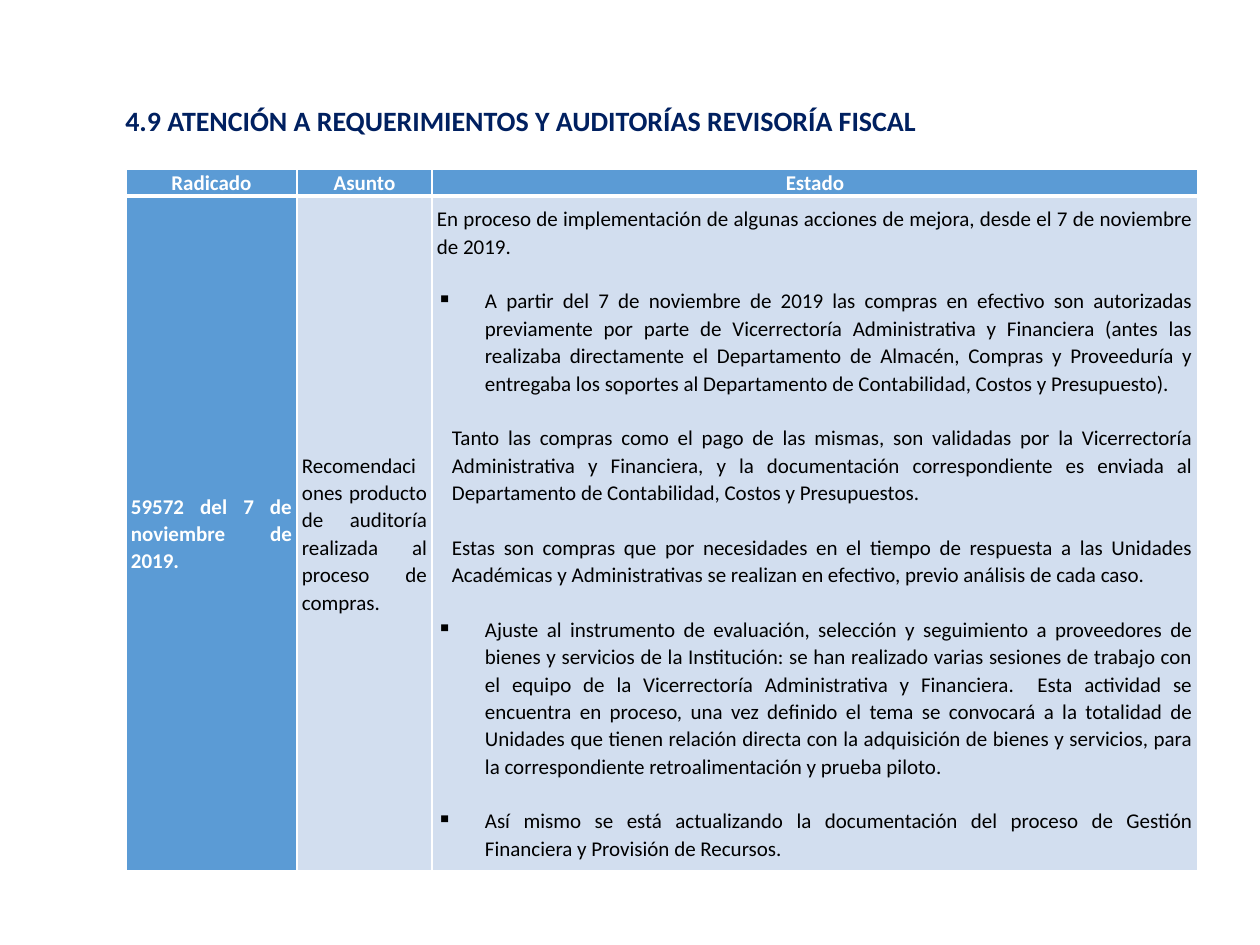
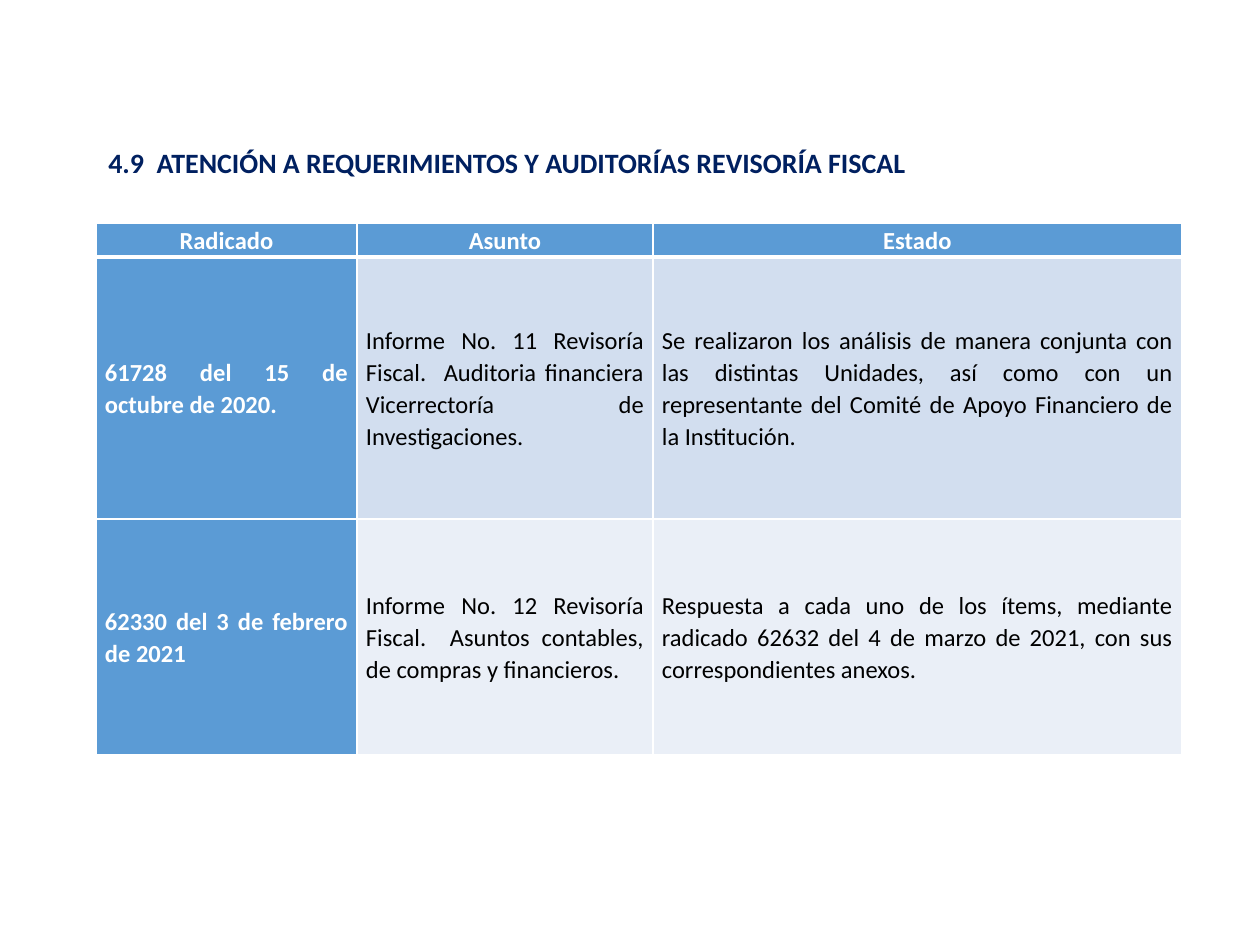
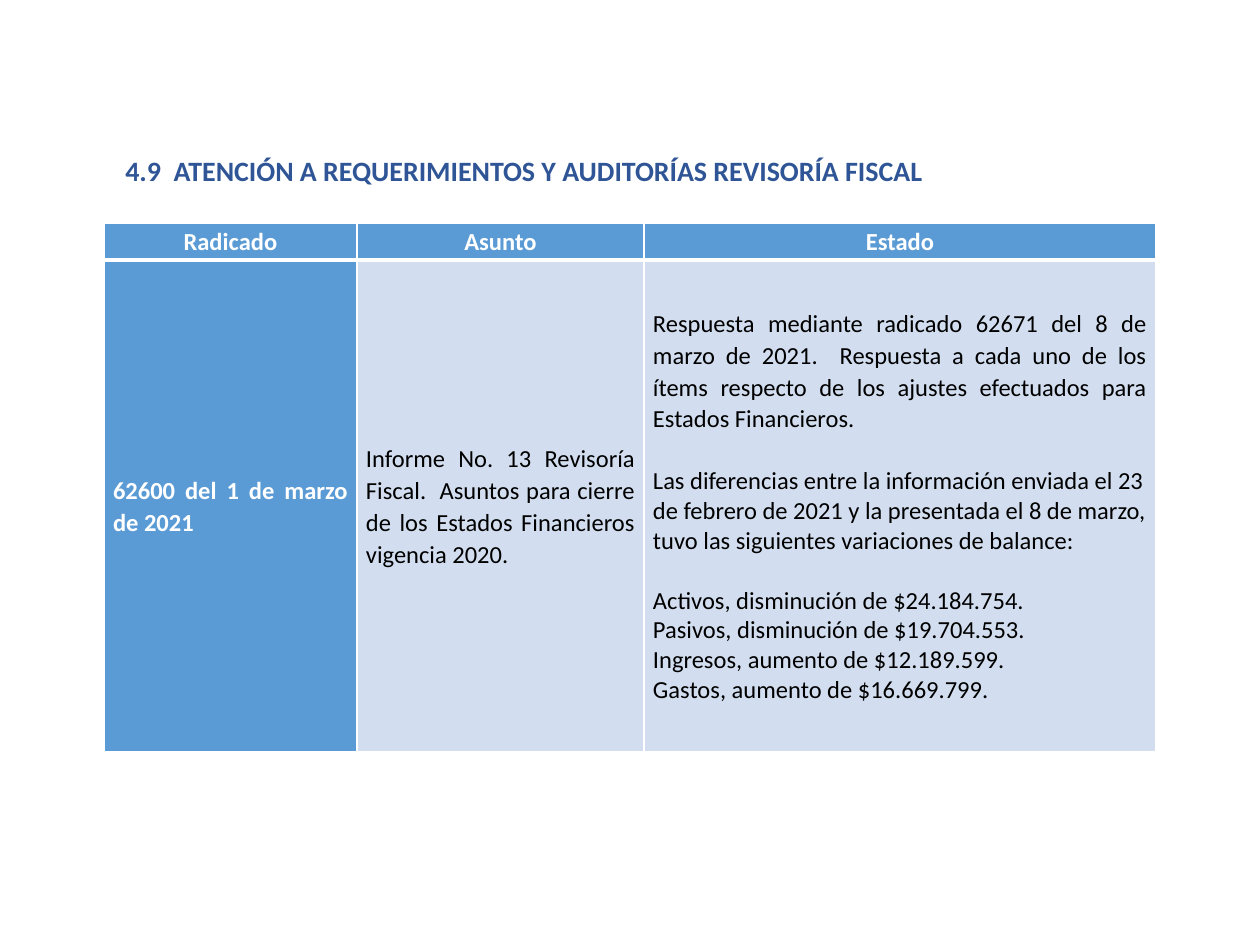
from lxml import etree
from pptx import Presentation
from pptx.dml.color import RGBColor
from pptx.enum.text import MSO_ANCHOR, PP_ALIGN
from pptx.oxml.ns import qn
from pptx.util import Emu, Pt

MIDDLE, BOTTOM = MSO_ANCHOR.MIDDLE, MSO_ANCHOR.BOTTOM
LEFT, CENTER, JUSTIFY = PP_ALIGN.LEFT, PP_ALIGN.CENTER, PP_ALIGN.JUSTIFY

NAVY = RGBColor(0x00, 0x20, 0x60)
ROYAL = RGBColor(0x2F, 0x55, 0x97)
BLUE = RGBColor(0x5B, 0x9B, 0xD5)
BAND_COLORS = [RGBColor(0xD2, 0xDE, 0xEF), RGBColor(0xEA, 0xEF, 0xF7)]
WHITE = RGBColor(0xFF, 0xFF, 0xFF)
BLACK = RGBColor(0x00, 0x00, 0x00)

FONT = "Calibri"
PX_PER_INCH = 126
LINE_SPACING = 1.07
THIN, THICK = 1, 3

# Paragraph kinds: alignment, line spacing, left margin px, bullet
KINDS = {
    "body": (JUSTIFY, LINE_SPACING, 0, None),
    "indented": (JUSTIFY, LINE_SPACING, 15, None),
    "bullet": (JUSTIFY, LINE_SPACING, 48, "▪"),
    "plain": (LEFT, 1.0, 0, None),
    "header": (CENTER, LINE_SPACING, 0, None),
}

HEADERS = ["Radicado", "Asunto", "Estado"]

# Each cell is a text or a list of (kind, points before, text)
PURCHASE_STATUS = [
    ("body", 0, "En proceso de implementación de algunas acciones de mejora, desde el 7 de noviembre de 2019."),
    ("bullet", 15.6, "A partir del 7 de noviembre de 2019 las compras en efectivo son autorizadas previamente por parte de Vicerrectoría Administrativa y Financiera (antes las realizaba directamente el Departamento de Almacén, Compras y Proveeduría y entregaba los soportes al Departamento de Contabilidad, Costos y Presupuesto)."),
    ("indented", 15.6, "Tanto las compras como el pago de las mismas, son validadas por la Vicerrectoría Administrativa y Financiera, y la documentación correspondiente es enviada al Departamento de Contabilidad, Costos y Presupuestos."),
    ("indented", 15.6, "Estas son compras que por necesidades en el tiempo de respuesta a las Unidades Académicas y Administrativas se realizan en efectivo, previo análisis de cada caso."),
    ("bullet", 15.6, "Ajuste al instrumento de evaluación, selección y seguimiento a proveedores de bienes y servicios de la Institución: se han realizado varias sesiones de trabajo con el equipo de la Vicerrectoría Administrativa y Financiera.  Esta actividad se encuentra en proceso, una vez definido el tema se convocará a la totalidad de Unidades que tienen relación directa con la adquisición de bienes y servicios, para la correspondiente retroalimentación y prueba piloto."),
    ("bullet", 15.6, "Así mismo se está actualizando la documentación del proceso de Gestión Financiera y Provisión de Recursos."),
]
BALANCE_STATUS = [
    ("body", 0, "Respuesta mediante radicado 62671 del 8 de marzo de 2021.  Respuesta a cada uno de los ítems respecto de los ajustes efectuados para Estados Financieros."),
    ("plain", 18.3, "Las diferencias entre la información enviada el 23 de febrero de 2021 y la presentada el 8 de marzo, tuvo las siguientes variaciones de balance:"),
    ("plain", 17.1, "Activos, disminución de $24.184.754."),
    ("plain", 0, "Pasivos, disminución de $19.704.553."),
    ("plain", 0, "Ingresos, aumento de $12.189.599."),
    ("plain", 0, "Gastos, aumento de $16.669.799."),
]

SLIDES = [
    {
        "title": "4.9 ATENCIÓN A REQUERIMIENTOS Y AUDITORÍAS REVISORÍA FISCAL",
        "title_at": (113, 71, 1147), "title_color": NAVY,
        "table_at": (126, 169), "columns": [171, 135, 766], "heights": [26, 675],
        "size": 12, "inset": 5,
        "rows": [
            ["59572 del 7 de noviembre de 2019.",
             "Recomendaciones producto de auditoría realizada al proceso de compras.",
             PURCHASE_STATUS],
        ],
    },
    {
        "title": "4.9  ATENCIÓN A REQUERIMIENTOS Y AUDITORÍAS REVISORÍA FISCAL",
        "title_at": (96, 113, 1147), "title_color": NAVY,
        "table_at": (96, 223), "columns": [261, 296, 529], "heights": [34, 262, 236],
        "size": 14, "inset": 9,
        "rows": [
            ["61728 del 15 de octubre de 2020.",
             "Informe No. 11 Revisoría Fiscal.  Auditoria financiera Vicerrectoría de Investigaciones.",
             "Se realizaron los análisis de manera conjunta con las distintas Unidades, así como con un representante del Comité de Apoyo Financiero de la Institución."],
            ["62330 del 3 de febrero de 2021",
             "Informe No. 12 Revisoría Fiscal.  Asuntos contables, de compras y financieros.",
             "Respuesta a cada uno de los ítems, mediante radicado 62632 del 4 de marzo de 2021, con sus correspondientes anexos."],
        ],
    },
    {
        "title": "4.9  ATENCIÓN A REQUERIMIENTOS Y AUDITORÍAS REVISORÍA FISCAL",
        "title_at": (113, 121, 1033), "title_color": ROYAL,
        "table_at": (104, 223), "columns": [253, 287, 512], "heights": [37, 492],
        "size": 14, "inset": 9,
        "rows": [
            ["62600 del 1 de marzo de 2021",
             "Informe No. 13 Revisoría Fiscal.  Asuntos para cierre de los Estados Financieros vigencia 2020.",
             BALANCE_STATUS],
        ],
    },
]


def px(length):
    return Emu(round(length * 914400 / PX_PER_INCH))


def add_span(para, text, size, color, bold):
    span = para.add_run()
    span.text = text
    span.font.name = FONT
    span.font.size = Pt(size)
    span.font.bold = bold
    span.font.color.rgb = color


def format_para(para, kind, before):
    alignment, spacing, margin, bullet = KINDS[kind]
    properties = para._p.get_or_add_pPr()
    properties.set("marL", str(px(margin)))
    properties.set("indent", str(px(-margin) if bullet else 0))
    if bullet:
        etree.SubElement(properties, qn("a:buChar"), char=bullet)
    else:
        etree.SubElement(properties, qn("a:buNone"))
    para.alignment = alignment
    para.line_spacing = spacing
    if before:
        para.space_before = Pt(before)


def add_border(cell, side, width):
    line = etree.SubElement(cell._tc.get_or_add_tcPr(), qn("a:ln" + side), w=str(Pt(width)))
    fill = etree.SubElement(line, qn("a:solidFill"))
    etree.SubElement(fill, qn("a:srgbClr"), val=str(WHITE))


def fill_cell(cell, content, row, column, size, inset):
    # Heavy rule between the header and the first body row
    widths = {"L": THIN, "R": THIN,
              "T": THICK if row == 1 else THIN,
              "B": THICK if row == 0 else THIN}
    for side, width in widths.items():
        add_border(cell, side, width)

    strong = row == 0 or column == 0
    cell.fill.solid()
    cell.fill.fore_color.rgb = BLUE if strong else BAND_COLORS[(row - 1) % 2]
    cell.vertical_anchor = MIDDLE
    cell.margin_left = cell.margin_right = px(inset)
    cell.margin_top = cell.margin_bottom = 0

    if isinstance(content, str):
        content = [("header" if row == 0 else "body", 0, content)]
    frame = cell.text_frame
    for index, (kind, before, text) in enumerate(content):
        para = frame.add_paragraph() if index else frame.paragraphs[0]
        format_para(para, kind, before)
        add_span(para, text, size, WHITE if strong else BLACK, strong)


def add_title(page, text, position, color):
    left, top, width = position
    box = page.shapes.add_textbox(px(left), px(top), px(width), px(72))
    frame = box.text_frame
    frame.word_wrap = True
    frame.vertical_anchor = BOTTOM
    para = frame.paragraphs[0]
    format_para(para, "body", 0)
    para.space_after = Pt(8)
    add_span(para, text, 16, color, True)


def add_requests(page, content):
    left, top = content["table_at"]
    columns, heights = content["columns"], content["heights"]
    frame = page.shapes.add_table(len(heights), len(columns), px(left), px(top),
                                  px(sum(columns)), px(sum(heights)))
    table = frame.table
    table.first_row = table.horz_banding = False
    for column, width in enumerate(columns):
        table.columns[column].width = px(width)
    for row, texts in enumerate([HEADERS] + content["rows"]):
        table.rows[row].height = px(heights[row])
        for column, text in enumerate(texts):
            fill_cell(table.cell(row, column), text, row, column,
                      content["size"], content["inset"])


def main():
    deck = Presentation()
    deck.slide_width, deck.slide_height = px(1260), px(945)
    for content in SLIDES:
        page = deck.slides.add_slide(deck.slide_layouts[6])
        add_title(page, content["title"], content["title_at"], content["title_color"])
        add_requests(page, content)
    deck.save("out.pptx")


if __name__ == "__main__":
    main()
